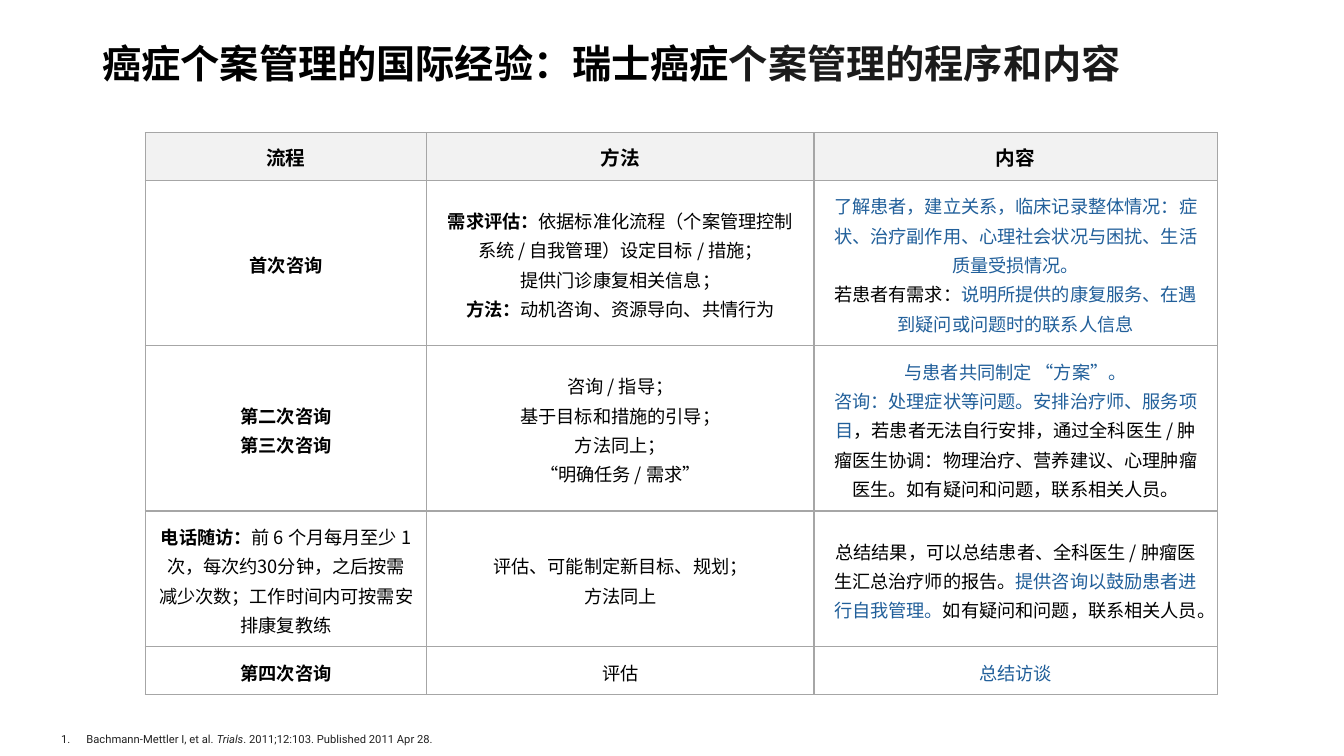
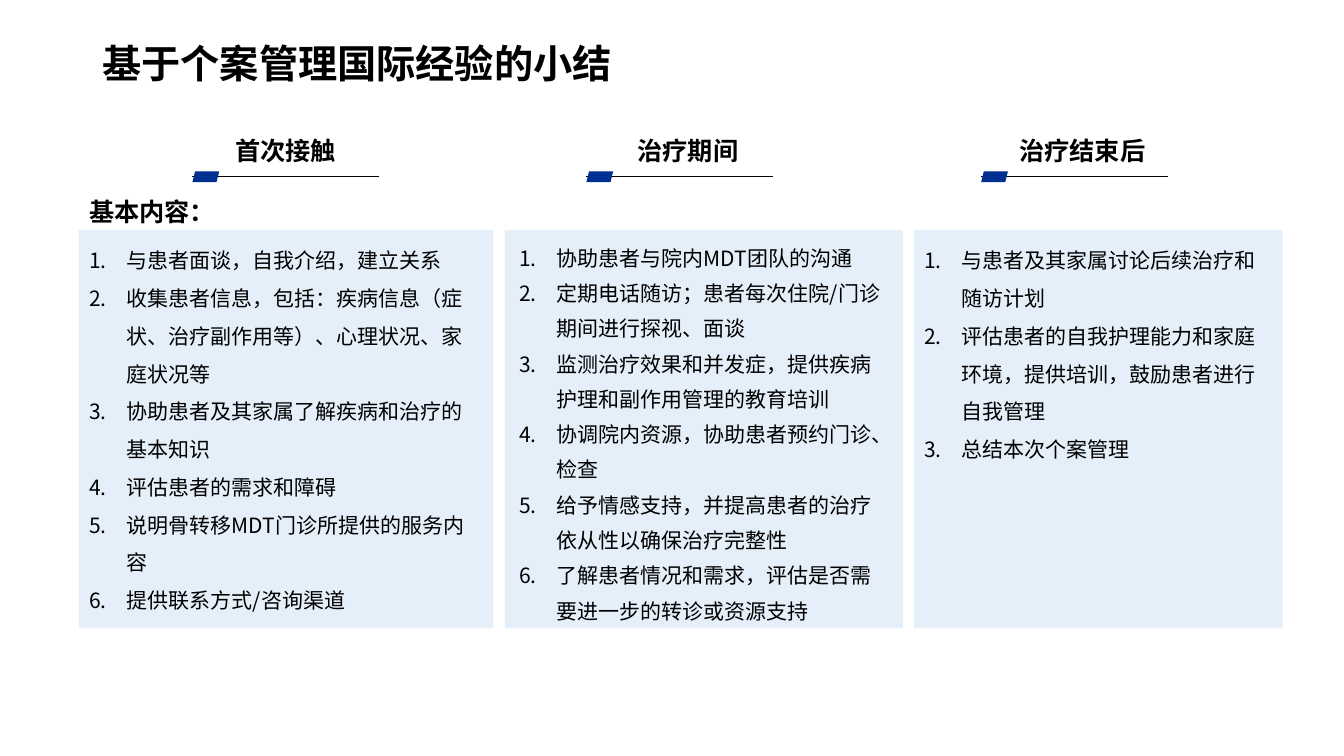
"""Build two slides on international experience of cancer case management."""
import pptx
import pptx.dml.color
import pptx.enum.shapes
import pptx.enum.text
import pptx.oxml
import pptx.oxml.ns
import pptx.util

SANS = "Noto Sans CJK SC"
BLACK, BLUE, NAVY = "000000", "215F9A", "002F92"
PALE, HEAD, WHITE, EDGE = "DCEAF7", "F2F2F2", "FFFFFF", "A6A6A6"
LOOKS = {
    "plain": (SANS, BLACK, False, False),
    "bold": (SANS, BLACK, True, False),
    "blue": (SANS, BLUE, False, False),
    "title": ("Cambria", "1B1B1B", True, False),
    "cite": ("Roboto", "212121", False, False),
    "slant": ("Roboto", "212121", False, True),
}
NS = pptx.oxml.ns.nsdecls("a")
SHAPE = pptx.enum.shapes.MSO_SHAPE
ALIGN = pptx.enum.text.PP_ALIGN
ANCHOR = pptx.enum.text.MSO_ANCHOR
AUTO = pptx.enum.text.MSO_AUTO_SIZE
hue = pptx.dml.color.RGBColor.from_string

deck = pptx.Presentation()
deck.slide_width = pptx.util.Inches(13.33)
deck.slide_height = pptx.util.Inches(7.5)
UNIT = deck.slide_width / 160


def grid(*cells):
    return [round(cell * UNIT) for cell in cells]


def write(frame, lines, size, space=1.0, align=ALIGN.LEFT, hang=None):
    frame.word_wrap = True
    frame.text = "\n".join("" for line in lines)
    for par, line in zip(frame.paragraphs, lines):
        par.alignment, par.line_spacing = align, space
        par.space_before = pptx.util.Pt(0)
        if hang:
            props = par._p.get_or_add_pPr()
            left, first = grid(*hang)
            props.set("marL", str(left))
            props.set("indent", str(first))
            props.append(pptx.oxml.parse_xml(f'<a:buFont {NS} typeface="+mj-lt"/>'))
            props.append(pptx.oxml.parse_xml(f'<a:buAutoNum {NS} type="arabicPeriod"/>'))
        for text, look in line:
            run = par.add_run()
            run.text = text
            face, tint, bold, slant = LOOKS[look]
            font = run.font
            font.name, font.size = face, pptx.util.Pt(size)
            font.bold, font.italic = bold, slant
            font.color.rgb = hue(tint)
            run._r.rPr.append(pptx.oxml.parse_xml(f'<a:ea {NS} typeface="{SANS}"/>'))


TITLES = [
    (5, [("癌症个案管理的国际经验：瑞士癌症", "bold"), ("个案管理的程序和内容", "title")]),
    (4, [("基于个案管理国际经验的小结", "bold")]),
]
slides = []
for index, line in TITLES:
    slide = deck.slides.add_slide(deck.slide_layouts[index])
    title = slide.shapes.title
    title.left, title.top, title.width, title.height = grid(11, 4.8, 138, 6.1)
    write(title.text_frame, [line], 28, 0.9)
    title.text_frame.auto_size = AUTO.NONE
    title.text_frame.vertical_anchor = ANCHOR.MIDDLE
    slides.append(slide)
first, second = slides

ROWS = [
    [[[("流程", "bold")]], [[("方法", "bold")]], [[("内容", "bold")]]],
    [
        [[("首次咨询", "bold")]],
        [
            [("需求评估：", "bold"), ("依据标准化流程（个案管理控制系统 / 自我管理）设定目标 / 措施；", "plain")],
            [("提供门诊康复相关信息；", "plain")],
            [("方法：", "bold"), ("动机咨询、资源导向、共情行为", "plain")],
        ],
        [
            [("了解患者，建立关系，临床记录整体情况：症状、治疗副作用、心理社会状况与困扰、生活质量受损情况。", "blue")],
            [("若患者有需求：", "plain"), ("说明所提供的康复服务、在遇到疑问或问题时的联系人信息", "blue")],
        ],
    ],
    [
        [[("第二次咨询", "bold")], [("第三次咨询", "bold")]],
        [
            [("咨询 / 指导；", "plain")],
            [("基于目标和措施的引导；", "plain")],
            [("方法同上；", "plain")],
            [("“明确任务 / 需求”", "plain")],
        ],
        [
            [("与患者共同制定 “方案”。", "blue")],
            [
                ("咨询：处理症状等问题。安排治疗师、服务项目", "blue"),
                ("，若患者无法自行安排，通过全科医生 / 肿瘤医生协调：物理治疗、营养建议、心理肿瘤医生。如有疑问和问题，联系相关人员。", "plain"),
            ],
        ],
    ],
    [
        [[("电话随访：", "bold"), ("前 6 个月每月至少 1 次，每次约30分钟，之后按需减少次数；工作时间内可按需安排康复教练", "plain")]],
        [[("评估、可能制定新目标、规划；", "plain")], [("方法同上", "plain")]],
        [[
            ("总结结果，可以总结患者、全科医生 / 肿瘤医生汇总治疗师的报告。", "plain"),
            ("提供咨询以鼓励患者进行自我管理。", "blue"),
            ("如有疑问和问题，联系相关人员。", "plain"),
        ]],
    ],
    [[[("第四次咨询", "bold")]], [[("评估", "plain")]], [[("总结访谈", "blue")]]],
]
WIDTHS = grid(33.5, 46.1, 48)
HEIGHTS = grid(5.6, 19.7, 19.7, 16.1, 5.6)
table = first.shapes.add_table(
    len(ROWS), len(WIDTHS), *grid(17.3, 15.8), sum(WIDTHS), sum(HEIGHTS)).table
for column, width in zip(table.columns, WIDTHS):
    column.width = width
for row, height in zip(table.rows, HEIGHTS):
    row.height = height
for r, row in enumerate(ROWS):
    for c, lines in enumerate(row):
        cell = table.cell(r, c)
        write(cell.text_frame, lines, 13 if r else 14, pptx.util.Pt(21), ALIGN.CENTER)
        cell.vertical_anchor = ANCHOR.MIDDLE
        cell.margin_left = cell.margin_right = pptx.util.Inches(0.13)
        cell.margin_top = cell.margin_bottom = pptx.util.Inches(0.09)
        props = cell._tc.get_or_add_tcPr()
        for side in "LRTB":
            props.append(pptx.oxml.parse_xml(
                f'<a:ln{side} {NS} w="12700"><a:solidFill>'
                f'<a:srgbClr val="{EDGE}"/></a:solidFill></a:ln{side}>'))
        cell.fill.solid()
        cell.fill.fore_color.rgb = hue(WHITE if r else HEAD)

note = first.shapes.add_textbox(*grid(6.1, 86.6, 80, 2.9))
write(note.text_frame, [[
    ("Bachmann-Mettler I, et al.\u00a0", "cite"),
    ("Trials", "slant"),
    (". 2011;12:103. Published 2011 Apr 28.", "cite"),
]], 8, hang=(3, -3))

STAGES = [
    ("首次接触", (17.9, 32.2), (9.4, 49.3), (9.4, 47.3), 22.9, 1.5, 4.5, [
        "与患者面谈，自我介绍，建立关系",
        "收集患者信息，包括：疾病信息（症状、治疗副作用等）、心理状况、家庭状况等",
        "协助患者及其家属了解疾病和治疗的基本知识",
        "评估患者的需求和障碍",
        "说明骨转移MDT门诊所提供的服务内容",
        "提供联系方式/咨询渠道",
    ]),
    ("治疗期间", (65.8, 32.2), (60.1, 47.4), (54.6, 52.8), 69.8, 1.4, 10.5, [
        "协助患者与院内MDT团队的沟通",
        "定期电话随访；患者每次住院/门诊期间进行探视、面谈",
        "监测治疗效果和并发症，提供疾病护理和副作用管理的教育培训",
        "协调院内资源，协助患者预约门诊、检查",
        "给予情感支持，并提高患者的治疗依从性以确保治疗完整性",
        "了解患者情况和需求，评估是否需要进一步的转诊或资源支持",
    ]),
    ("治疗结束后", (116.5, 24.7), (108.8, 43.9), (108.8, 42.6), 116.8, 1.5, 4.5, [
        "与患者及其家属讨论后续治疗和随访计划",
        "评估患者的自我护理能力和家庭环境，提供培训，鼓励患者进行自我管理",
        "总结本次个案管理",
    ]),
]
shapes = second.shapes
label, *lists = [second.placeholders[n] for n in (1, 2, 3, 4)]
label.left, label.top, label.width, label.height = grid(9.4, 21, 142, 6)
write(label.text_frame, [[("基本内容：", "bold")]], 18, 1.5)
label.text_frame.vertical_anchor = ANCHOR.TOP
label.text_frame.auto_size = AUTO.NONE

for body, stage in zip(lists, STAGES):
    name, (x, wide), (left, width), (start, span), mark, space, dent, items = stage
    head = shapes.add_textbox(*grid(x, 15.5, wide, 4.8))
    write(head.text_frame, [[(name, "bold")]], 18, align=ALIGN.CENTER)

    panel = shapes.add_shape(SHAPE.RECTANGLE, *grid(left, 27.4, width, 47.4))
    panel.fill.solid()
    panel.fill.fore_color.rgb = hue(PALE)
    tint = panel._element.spPr.find(".//" + pptx.oxml.ns.qn("a:srgbClr"))
    tint.append(pptx.oxml.parse_xml(f'<a:alpha {NS} val="74000"/>'))
    shapes._spTree.insert(2, panel._element)

    body.left, body.top, body.width, body.height = grid(start, 27.4, span, 47.4)
    write(body.text_frame, [[(item, "plain")] for item in items], 15, space,
          hang=(dent, -4.5))
    body.text_frame.vertical_anchor = ANCHOR.TOP
    body.text_frame.auto_size = AUTO.NONE

    rule = shapes.add_connector(
        pptx.enum.shapes.MSO_CONNECTOR.STRAIGHT, *grid(mark, 21.05, mark + 22.2, 21.05))
    rule.line.color.rgb = hue(BLACK)
    rule.line.width = pptx.util.Pt(0.75)
    rule._element.spPr.append(pptx.oxml.parse_xml(f"<a:effectLst {NS}/>"))
    flag = shapes.add_shape(SHAPE.PARALLELOGRAM, *grid(mark, 20.4, 3.2, 1.3))
    flag.adjustments[0] = 0.25
    flag.fill.solid()
    flag.fill.fore_color.rgb = hue(NAVY)
    for shape in (panel, flag):
        shape.line.fill.background()
        shape.shadow.inherit = False

deck.save("out.pptx")
